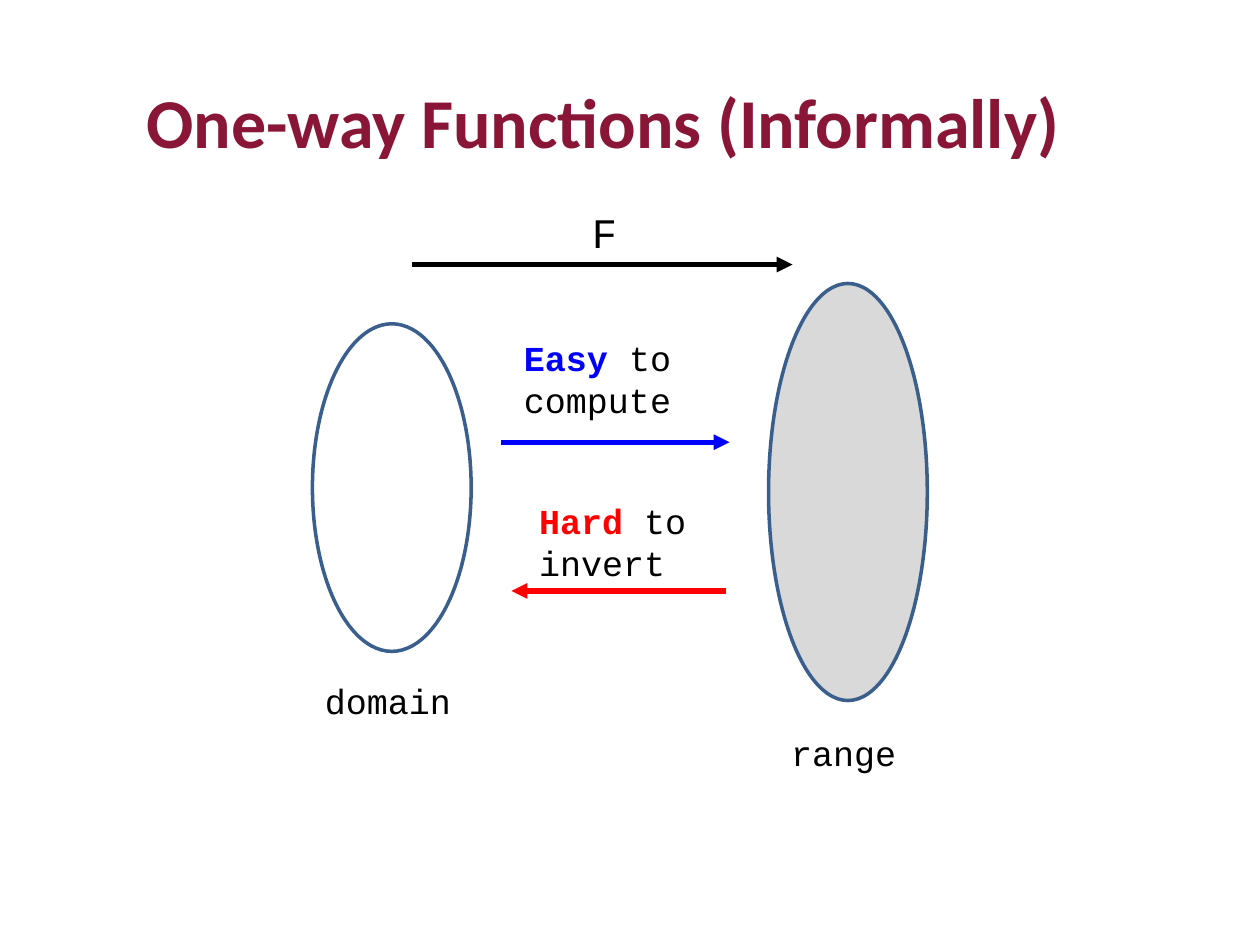
import pptx
import pptx.util
import pptx.dml.color
import pptx.enum.shapes
import pptx.enum.text
import pptx.oxml.ns
from lxml import etree

# Grid of 100 columns by 75 rows on a 10 by 7.5 inch slide
CELL = pptx.util.Inches(0.1)
COLUMNS, ROWS = 100, 75
LABEL_HEIGHT = 9.2
BLACK, BLUE, RED = "000000", "0000FF", "FF0000"
MAROON, OUTLINE, WHITE, GREY = "891637", "3A5F8C", "FFFFFF", "D9D9D9"


def grid(*cells):
    return [round(cell * CELL) for cell in cells]


def color(value):
    return pptx.dml.color.RGBColor.from_string(value)


def set_font(font, name, size, shade, bold=False):
    font.name = name
    font.size = pptx.util.Pt(size)
    font.color.rgb = color(shade)
    font.bold = bold


def set_title(page, text):
    title = page.shapes.title
    title.left, title.top, title.width, title.height = grid(0.2, 5.2, 95.3, 8.7)
    title.text_frame.text = text
    title.text_frame.vertical_anchor = pptx.enum.text.MSO_ANCHOR.MIDDLE
    para = title.text_frame.paragraphs[0]
    para.alignment = pptx.enum.text.PP_ALIGN.CENTER
    set_font(para.font, "Calibri", 40, MAROON, bold=True)


def add_set(page, left, top, height, fill):
    """Draw a set of values as a tall ellipse."""
    oval = page.shapes.add_shape(
        pptx.enum.shapes.MSO_SHAPE.OVAL, *grid(left, top, 12.6, height))
    oval.shadow.inherit = False
    oval.fill.solid()
    oval.fill.fore_color.rgb = color(fill)
    oval.line.color.rgb = color(OUTLINE)
    oval.line.width = pptx.util.Pt(2)


def add_arrow(page, start, end, row, shade):
    """Draw a level arrow along one row, pointing at the end column."""
    arrow = page.shapes.add_connector(
        pptx.enum.shapes.MSO_CONNECTOR.STRAIGHT, *grid(start, row, end, row))
    arrow.line.color.rgb = color(shade)
    arrow.line.width = pptx.util.Pt(3)
    qn = pptx.oxml.ns.qn
    etree.SubElement(arrow.line._get_or_add_ln(), qn("a:tailEnd"), type="triangle")
    etree.SubElement(arrow._element.spPr, qn("a:effectLst"))


def add_label(page, left, top, width, text, size=20):
    box = page.shapes.add_textbox(*grid(left, top, width, LABEL_HEIGHT))
    box.text_frame.word_wrap = True
    box.text_frame.vertical_anchor = pptx.enum.text.MSO_ANCHOR.MIDDLE
    para = box.text_frame.paragraphs[0]
    para.text = text
    set_font(para.font, "Courier New", size, BLACK)
    return para


def add_direction(page, left, top, keyword, verb, shade):
    """Label one direction of the function, with a coloured keyword."""
    para = add_label(page, left, top, 29, keyword)
    set_font(para.runs[0].font, "Courier New", 20, shade, bold=True)
    para.add_run().text = " to "
    para.add_line_break()
    para.add_run().text = verb
    for span in para.runs[1:]:
        set_font(span.font, "Courier New", 20, BLACK)


def main():
    deck = pptx.Presentation()
    deck.slide_width, deck.slide_height = grid(COLUMNS, ROWS)
    page = deck.slides.add_slide(deck.slide_layouts[5])
    set_title(page, "One-way Functions (Informally)")

    # Domain and range
    add_set(page, 24.8, 25.7, 26, WHITE)
    add_set(page, 61, 22.5, 33.1, GREY)

    # The function and the names of its sets
    add_arrow(page, 32.7, 62.9, 21, BLACK)
    add_label(page, 46, 13.8, 6.3, "F", size=24)
    add_label(page, 24.8, 51, 16.5, "domain")
    add_label(page, 61.8, 55.1, 16.5, "range")

    # Forward and backward directions
    add_arrow(page, 39.8, 57.9, 35.1, BLUE)
    add_direction(page, 40.6, 25.4, "Easy", "compute", BLUE)
    add_arrow(page, 57.6, 40.6, 46.9, RED)
    add_direction(page, 41.8, 38.4, "Hard", "invert", RED)

    deck.save("out.pptx")


if __name__ == "__main__":
    main()
